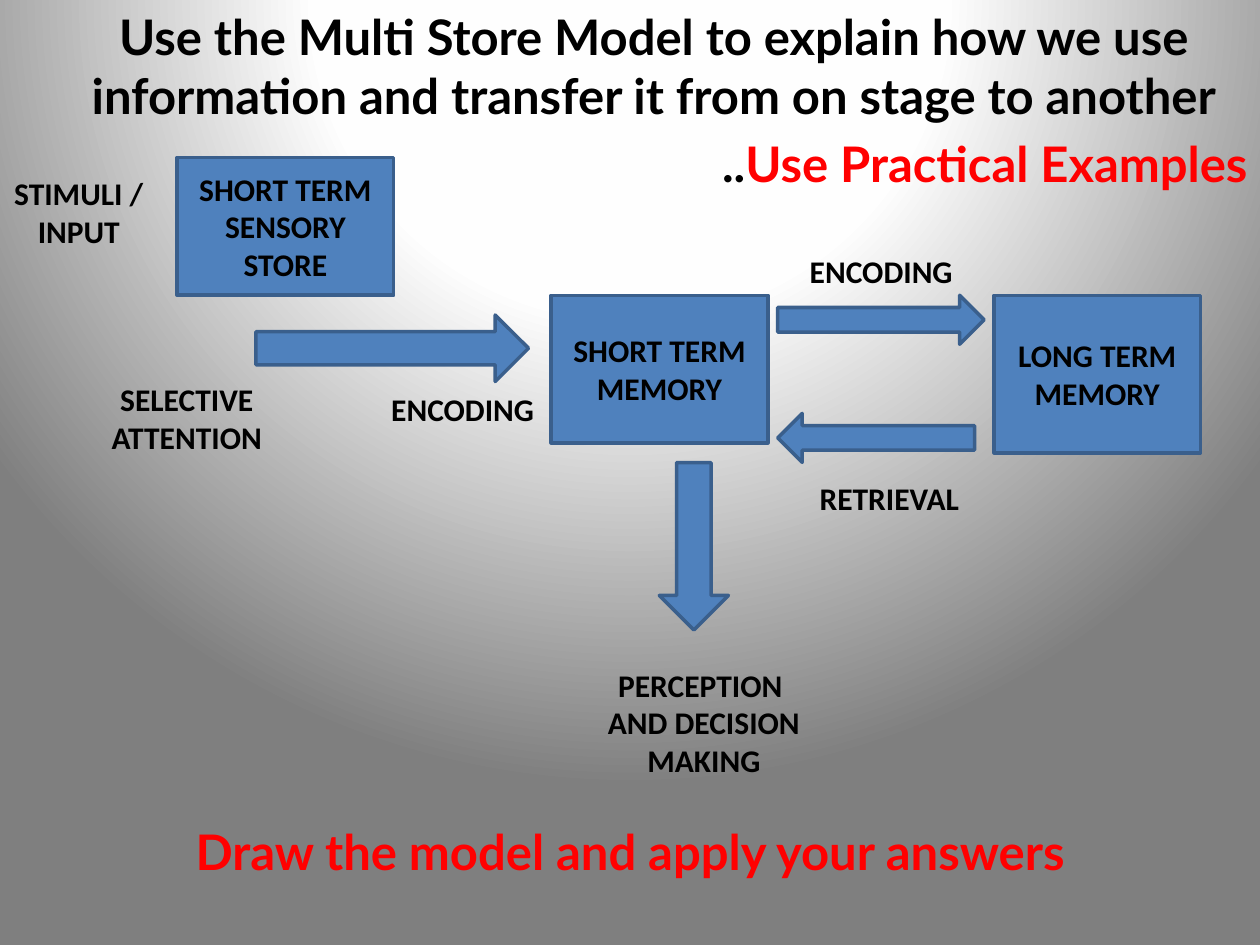
from dataclasses import dataclass

from pptx import Presentation
from pptx import util as u
from pptx.dml.color import RGBColor
from pptx.enum import shapes, text
from pptx.oxml import parse_xml
from pptx.oxml.ns import nsdecls

Pt = u.Pt
SHAPE = shapes.MSO_SHAPE
ALIGN = text.PP_ALIGN
ANCHOR = text.MSO_ANCHOR


@dataclass(frozen=True)
class Theme:
    heading_font: str = "Lato"
    label_font: str = "Calibri"
    heading_size: float = 28
    label_size: float = 18
    line_width: float = 2
    ink: str = "000000"
    accent: str = "FF0000"
    fill: str = "4F81BD"
    line: str = "3A5F8C"
    gradient: tuple = ((0, "FFFFFF"), (40, "FEFEFE"), (100, "7F7F7F"))


class Diagram:
    def __init__(self, page, theme):
        self.page = page
        self.theme = theme

    def background(self):
        stops = "".join(
            f'<a:gs pos="{position * 1000}"><a:srgbClr val="{color}"/></a:gs>'
            for position, color in self.theme.gradient
        )
        self.page._element.cSld.insert(0, parse_xml(
            f'<p:bg {nsdecls("p", "a")}><p:bgPr>'
            f'<a:gradFill rotWithShape="1"><a:gsLst>{stops}</a:gsLst>'
            '<a:path path="circle"><a:fillToRect l="50000" t="-80000" '
            'r="50000" b="180000"/></a:path></a:gradFill>'
            '<a:effectLst/></p:bgPr></p:bg>'
        ))

    def style(self, para, font, size, color, align):
        para.alignment = align
        para.font.name = font
        para.font.size = Pt(size)
        para.font.bold = True
        para.font.color.rgb = RGBColor.from_string(color)

    def caption(self, box, lines, align=ALIGN.CENTER, anchor=ANCHOR.TOP):
        frame = box.text_frame
        frame.word_wrap = True
        frame.vertical_anchor = anchor
        frame.text = lines
        for para in frame.paragraphs:
            self.style(para, self.theme.label_font, self.theme.label_size,
                       self.theme.ink, align)

    def title(self, heading, lead, emphasis, bounds):
        theme = self.theme
        box = self.page.shapes.title
        box.left, box.top, box.width, box.height = map(Pt, bounds)
        frame = box.text_frame
        frame.word_wrap = True
        frame.auto_size = text.MSO_AUTO_SIZE.NONE
        frame.vertical_anchor = ANCHOR.TOP
        frame.text = heading
        aside = frame.add_paragraph()
        aside.space_before = Pt(theme.heading_size * 0.2)
        aside.add_run().text = lead
        span = aside.add_run()
        span.text = emphasis
        for para, align in zip(frame.paragraphs, (ALIGN.CENTER, ALIGN.RIGHT)):
            self.style(para, theme.heading_font, theme.heading_size,
                       theme.ink, align)
        span.font.color.rgb = RGBColor.from_string(theme.accent)

    def task(self, wording, bounds):
        theme = self.theme
        box = self.label(wording, bounds)
        self.style(box.text_frame.paragraphs[0], theme.heading_font,
                   theme.heading_size, theme.accent, ALIGN.CENTER)

    def label(self, lines, bounds, align=ALIGN.CENTER):
        box = self.page.shapes.add_textbox(*map(Pt, bounds))
        self.caption(box, lines, align)
        return box

    def block(self, kind, bounds):
        box = self.page.shapes.add_shape(kind, *map(Pt, bounds))
        box.shadow.inherit = False
        box.fill.solid()
        box.fill.fore_color.rgb = RGBColor.from_string(self.theme.fill)
        box.line.color.rgb = RGBColor.from_string(self.theme.line)
        box.line.width = Pt(self.theme.line_width)
        return box

    def store(self, name, bounds):
        self.caption(self.block(SHAPE.RECTANGLE, bounds), name,
                     anchor=ANCHOR.MIDDLE)


def main():
    deck = Presentation()
    deck.slide_width, deck.slide_height = Pt(720), Pt(540)
    page = deck.slides.add_slide(deck.slide_layouts[5])
    diagram = Diagram(page, Theme())

    diagram.background()
    diagram.title(
        "Use the Multi Store Model to explain how we use information "
        "and transfer it from on stage to another",
        "..", "Use Practical Examples", (27, 0, 693, 115))

    for name, bounds in (
        ("SHORT TERM SENSORY STORE", (101.25, 90, 123.75, 78.75)),
        ("SHORT TERM MEMORY", (315, 168.75, 123.75, 84.4)),
        ("LONG TERM MEMORY", (568, 168.75, 118, 90)),
    ):
        diagram.store(name, bounds)

    for kind, bounds in (
        (SHAPE.RIGHT_ARROW, (146.25, 180, 155.75, 38)),
        (SHAPE.DOWN_ARROW, (376.75, 264.4, 39.5, 95.6)),
        (SHAPE.RIGHT_ARROW, (444.4, 168.75, 118, 28)),
        (SHAPE.LEFT_ARROW, (444.4, 236.25, 112.5, 28)),
    ):
        diagram.block(kind, bounds)

    for lines, bounds, align in (
        ("STIMULI / INPUT", (0, 95.75, 90, 51), ALIGN.CENTER),
        ("SELECTIVE\nATTENTION", (56.25, 213.75, 101, 51), ALIGN.CENTER),
        ("ENCODING", (213.75, 219.5, 101.25, 29), ALIGN.CENTER),
        ("ENCODING", (455.6, 140.5, 106.5, 29), ALIGN.LEFT),
        ("RETRIEVAL", (461.25, 270, 96, 29), ALIGN.LEFT),
        ("PERCEPTION \nAND DECISION\nMAKING", (337.5, 376.75, 129.5, 72.7),
         ALIGN.CENTER),
    ):
        diagram.label(lines, bounds, align)

    diagram.task("Draw the model and apply your answers", (0, 466, 720, 41))
    deck.save("out.pptx")


if __name__ == "__main__":
    main()
